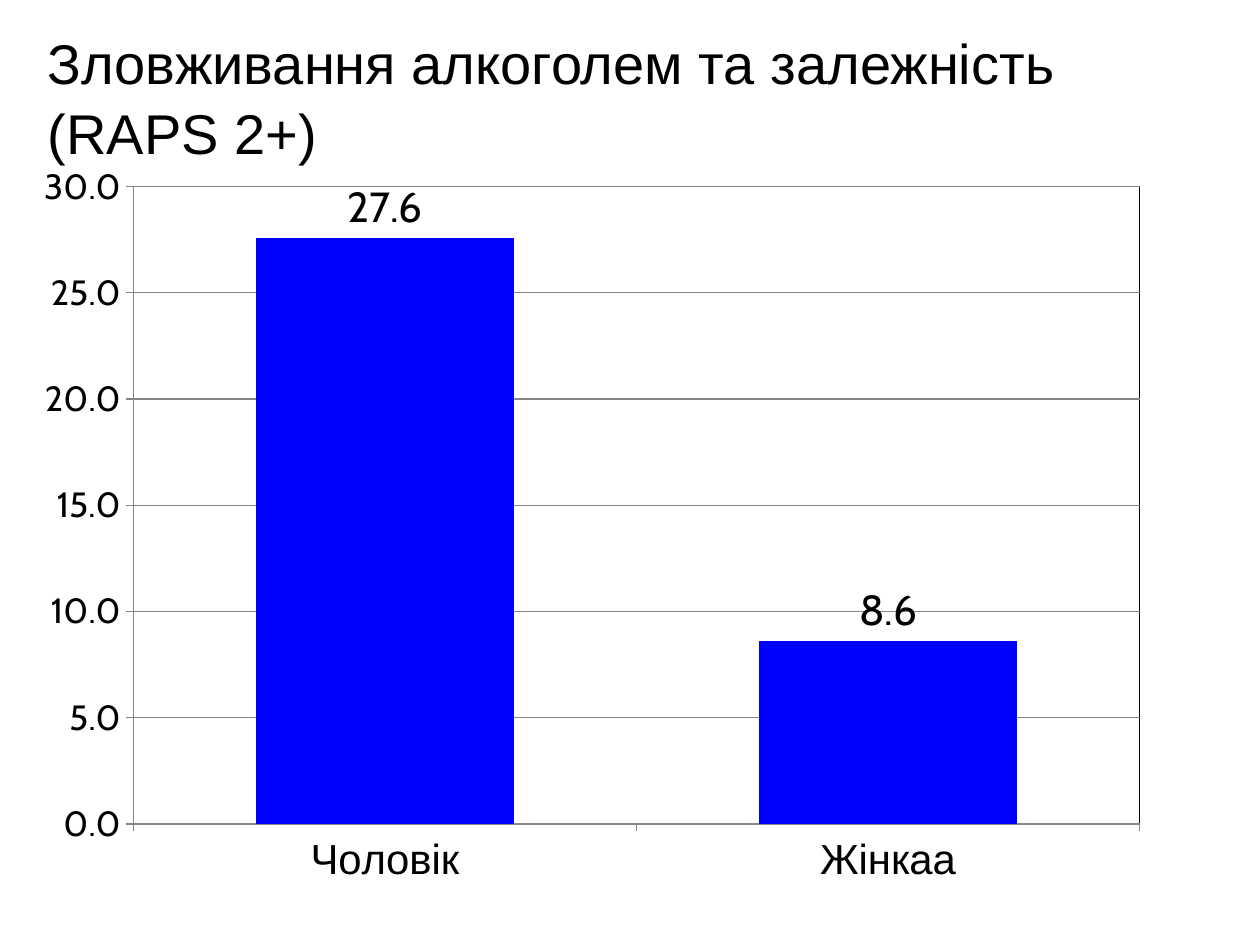
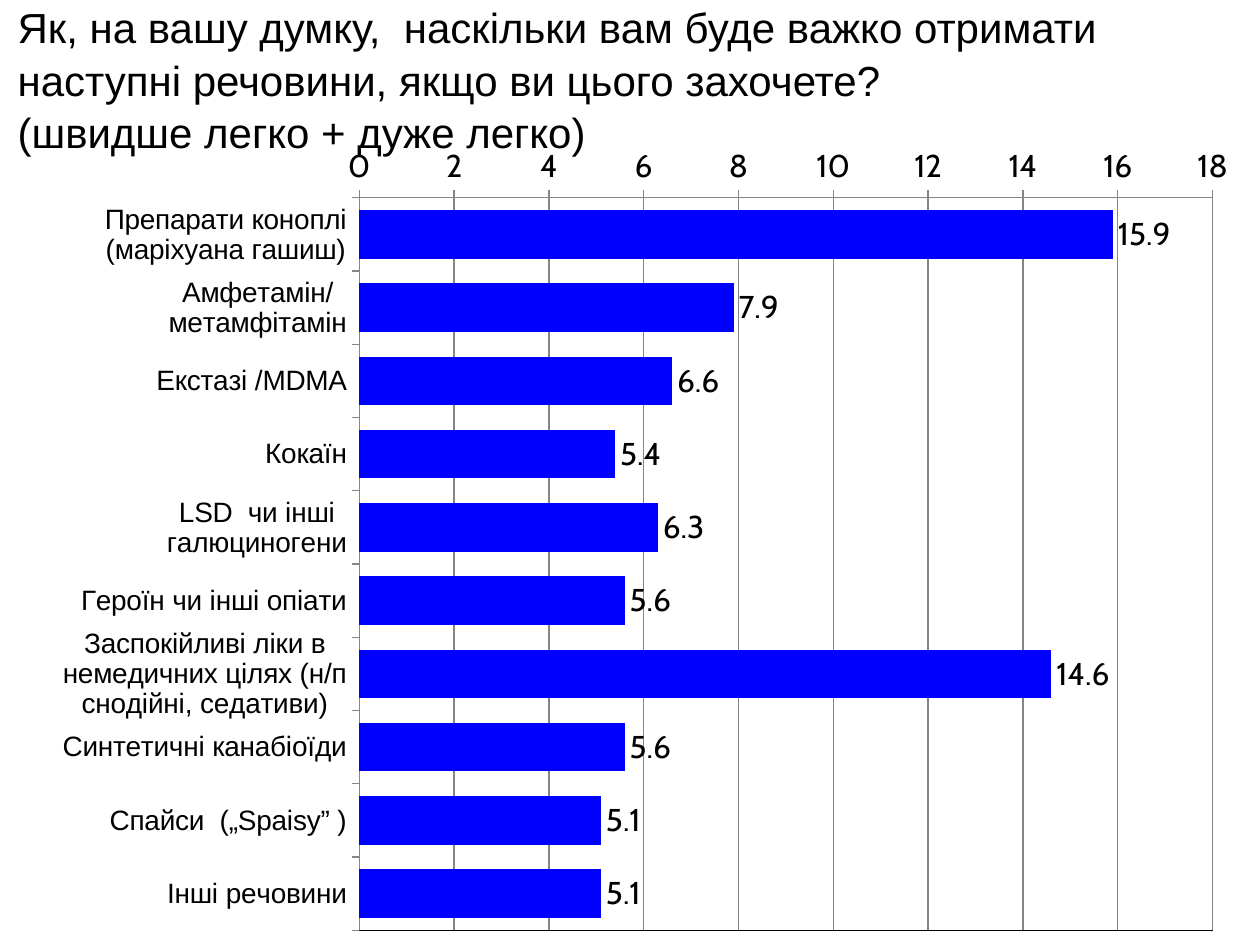
from lxml import etree
from pptx import Presentation
from pptx.chart.data import CategoryChartData
from pptx.dml.color import RGBColor
from pptx.enum.chart import XL_CHART_TYPE, XL_LABEL_POSITION, XL_TICK_MARK
from pptx.enum.text import MSO_ANCHOR, MSO_AUTO_SIZE, PP_ALIGN
from pptx.oxml import parse_xml
from pptx.oxml.ns import nsdecls, qn
from pptx.util import Pt

COLORS = {"text": "000000", "bar": "0000FF", "grid": "868686", "frame": "000000"}
TEXT_FONT, NUMBER_FONT = "Arial", "Cabin"
EMU_PER_PX = 914400 / 126


def px(n):
    return round(n * EMU_PER_PX)


def rgb(name):
    return RGBColor.from_string(COLORS[name])


class Deck:
    def __init__(self, width, height):
        self.prs = Presentation()
        self.prs.slide_width, self.prs.slide_height = px(width), px(height)
        self.s = None

    def add_slide(self):
        self.s = self.prs.slides.add_slide(self.prs.slide_layouts[5])

    def style_font(self, font, size, name):
        font.size, font.name, font.bold = Pt(size), name, False
        font.color.rgb = rgb("text")

    def title(self, box, lines, size, bottom_inset=6):
        sp = self.s.shapes.title
        sp.left, sp.top, sp.width, sp.height = map(px, box)
        tf = sp.text_frame
        tf.word_wrap = True
        tf.auto_size = MSO_AUTO_SIZE.NONE
        tf.vertical_anchor = MSO_ANCHOR.MIDDLE
        tf.margin_top, tf.margin_bottom = 0, px(bottom_inset)
        p = tf.paragraphs[0]
        p.alignment = PP_ALIGN.LEFT
        p.line_spacing = 1.05
        for i, line in enumerate(lines):
            if i:
                p.add_line_break()
            r = p.add_run()
            r.text = line
            self.style_font(r.font, size, TEXT_FONT)

    def axis(self, axis, size, font):
        axis.major_tick_mark = XL_TICK_MARK.OUTSIDE
        axis.minor_tick_mark = XL_TICK_MARK.NONE
        axis.format.line.color.rgb = rgb("grid")
        axis.format.line.width = Pt(0.75)
        self.style_font(axis.tick_labels.font, size, font)

    def plot_area(self, chart, layout):
        area = chart.plots[0]._element.getparent()
        for old in area.findall(qn("c:layout")):
            area.remove(old)
        root = parse_xml(f"<c:layout {nsdecls('c')}/>")
        manual = etree.SubElement(root, qn("c:manualLayout"))
        settings = [("layoutTarget", "inner"), ("xMode", "edge"), ("yMode", "edge")]
        for tag, value in settings + list(zip("xywh", layout)):
            etree.SubElement(manual, qn(f"c:{tag}")).set("val", str(value))
        area.insert(0, root)
        area.append(parse_xml(
            f'<c:spPr {nsdecls("c", "a")}><a:noFill/><a:ln w="9525"><a:solidFill>'
            f'<a:srgbClr val="{COLORS["frame"]}"/></a:solidFill></a:ln></c:spPr>'))

    def bar_chart(self, kind, box, data, layout, gap, scale, sizes,
                  number_format, reverse=False):
        cd = CategoryChartData()
        cd.categories = [name for name, _ in data]
        cd.add_series("Series 1", [value for _, value in data])
        chart = self.s.shapes.add_chart(kind, *map(px, box), cd).chart
        chart.has_legend = chart.has_title = False
        self.style_font(chart.font, 18, NUMBER_FONT)
        category_size, value_size, label_size = sizes

        # Axes
        cat, val = chart.category_axis, chart.value_axis
        self.axis(cat, category_size, TEXT_FONT)
        self.axis(val, value_size, NUMBER_FONT)
        cat.reverse_order = reverse
        val.minimum_scale = 0
        val.maximum_scale, val.major_unit = scale
        val.has_major_gridlines = True
        val.major_gridlines.format.line.color.rgb = rgb("grid")
        val.major_gridlines.format.line.width = Pt(0.75)
        val.tick_labels.number_format = number_format
        val.tick_labels.number_format_is_linked = False

        # Bars and labels
        plot = chart.plots[0]
        plot.gap_width, plot.vary_by_categories = gap, False
        fill = plot.series[0].format.fill
        fill.solid()
        fill.fore_color.rgb = rgb("bar")
        plot.has_data_labels = True
        labels = plot.data_labels
        labels.show_value = True
        labels.position = XL_LABEL_POSITION.OUTSIDE_END
        labels.number_format, labels.number_format_is_linked = "0.0", False
        self.style_font(labels.font, label_size, NUMBER_FONT)
        self.plot_area(chart, layout)


def main():
    deck = Deck(1260, 945)

    # Alcohol abuse by sex
    deck.add_slide()
    deck.title((35, 26, 1171, 139),
               ["Зловживання алкоголем та залежність ", "(RAPS 2+)"], 32, 0)
    deck.bar_chart(
        XL_CHART_TYPE.COLUMN_CLUSTERED, (44, 165, 1174, 767),
        [("Чоловік", 27.6), ("Жінкаa", 8.6)],
        layout=(0.073, 0.027, 0.86, 0.832), gap=95, scale=(30, 5),
        sizes=(24, 20, 24), number_format="0.0")

    # Ease of obtaining substances
    deck.add_slide()
    deck.title((5, 26, 1250, 149),
               ["Як, на вашу думку,  наскільки вам буде важко отримати  "
                "наступні речовини, якщо ви цього захочете?",
                "(швидше легко + дуже легко)"], 24, 45)
    deck.bar_chart(
        XL_CHART_TYPE.BAR_CLUSTERED, (54, 135, 1174, 796),
        [("Препарати коноплі (маріхуана гашиш)", 15.9),
         ("Амфетамін/ метамфітамін", 7.9),
         ("Екстазі /MDMA", 6.6),
         ("Кокаїн", 5.4),
         ("LSD  чи інші галюциногени", 6.3),
         ("Героїн чи інші опіати", 5.6),
         ("Заспокійливі ліки в немедичних цілях (н/п снодійні, седативи)", 14.6),
         ("Синтетичні канабіоїди", 5.6),
         ("Спайси  („Spaisy” )", 5.1),
         ("Інші речовини", 5.1)],
        layout=(0.26, 0.079, 0.727, 0.921), gap=51, scale=(18, 2),
        sizes=(16, 18, 18), number_format="0", reverse=True)

    deck.prs.save("out.pptx")


if __name__ == "__main__":
    main()
